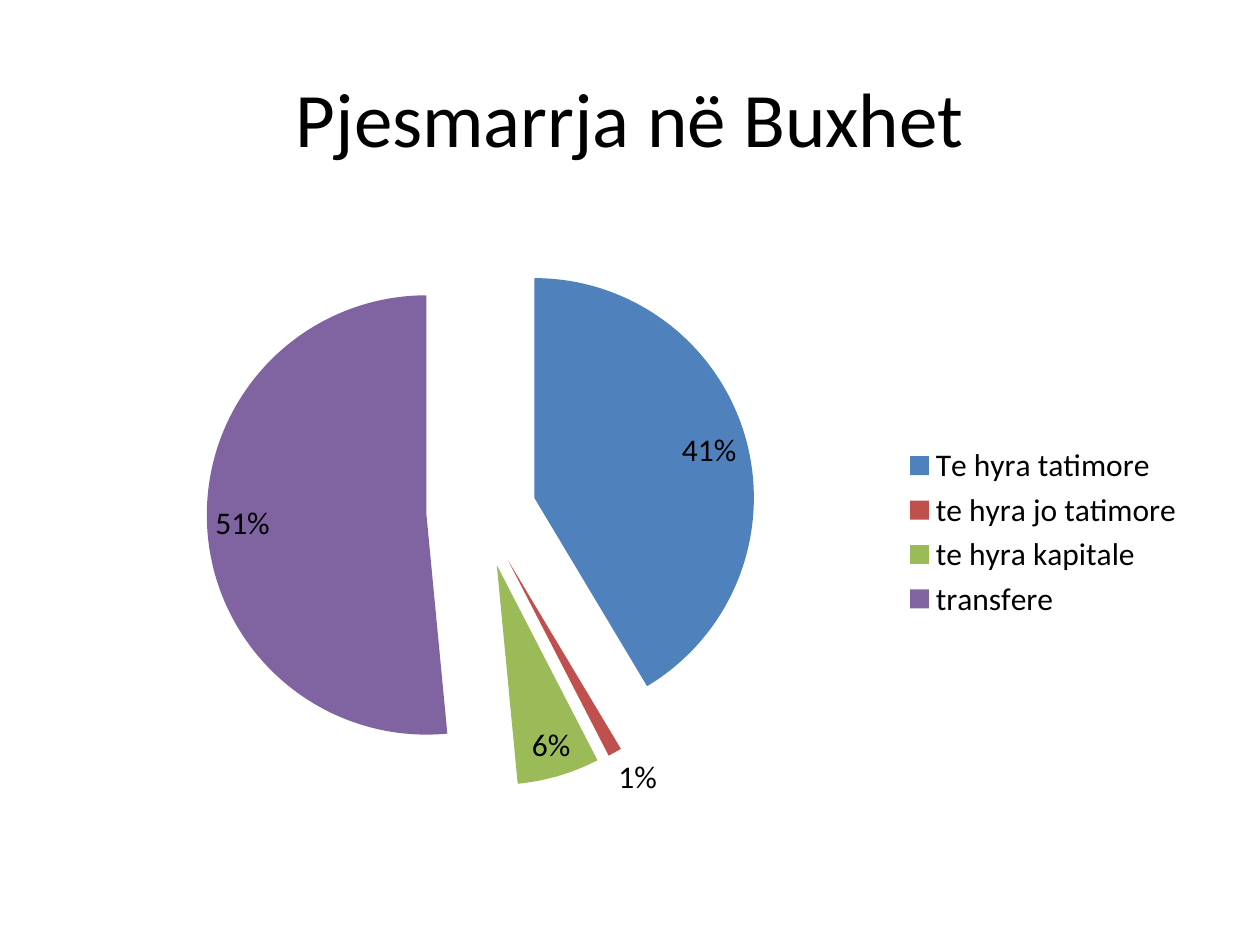
from lxml import etree
from pptx import Presentation
from pptx.chart.data import CategoryChartData
from pptx.dml.color import RGBColor
from pptx.enum.chart import XL_CHART_TYPE, XL_LABEL_POSITION, XL_LEGEND_POSITION
from pptx.enum.text import MSO_ANCHOR, PP_ALIGN
from pptx.oxml.ns import qn
from pptx.util import Inches, Pt

PIE = XL_CHART_TYPE.PIE
FIT = XL_LABEL_POSITION.BEST_FIT
RIGHT = XL_LEGEND_POSITION.RIGHT
MIDDLE = MSO_ANCHOR.MIDDLE
CENTER = PP_ALIGN.CENTER

SHARES = [
    ("Te hyra tatimore", 41, "4F81BD"),
    ("te hyra jo tatimore", 1, "C0504D"),
    ("te hyra kapitale", 6, "9BBB59"),
    ("transfere", 51, "8064A2"),
]


def style(font, size, color="000000"):
    for name, value in {"name": "Calibri", "size": Pt(size)}.items():
        setattr(font, name, value)
    font.color.rgb = RGBColor.from_string(color)


deck = Presentation()
deck.slide_width, deck.slide_height = Inches(10), Inches(7.5)
slide = deck.slides.add_slide(deck.slide_layouts[5])

# Title
title = slide.shapes.title
place = {"left": 0.5, "top": 0.3, "width": 9, "height": 1.25}
for name, value in place.items():
    setattr(title, name, Inches(value))
frame = title.text_frame
frame.text = "Pjesmarrja në Buxhet"
frame.vertical_anchor = MIDDLE
head = frame.paragraphs[0]
head.alignment = CENTER
style(head.runs[0].font, 44)

# Pie chart
data = CategoryChartData()
data.categories = [label for label, share, color in SHARES]
data.add_series("Series 1", [share for label, share, color in SHARES])
chart = slide.shapes.add_chart(
    PIE, Inches(0.5), Inches(1.75), Inches(9), Inches(4.95), data
).chart
style(chart.font, 18)
chart.has_title = False
chart.has_legend = True
chart.legend.position = RIGHT
chart.legend.include_in_layout = False

# Slice colours
plot = chart.plots[0]
plot.vary_by_categories = True
pie = plot.series[0]
for i, (label, share, color) in enumerate(SHARES):
    fill = pie.points[i].format.fill
    fill.solid()
    fill.fore_color.rgb = RGBColor.from_string(color)

# Pull the slices apart
burst = etree.Element(qn("c:explosion"), val="25")
pie._element.find(qn("c:dPt")).addprevious(burst)

# Labels: the shares are whole percents already
plot.has_data_labels = True
labels = plot.data_labels
options = {
    "show_value": True,
    "number_format": '0"%"',
    "number_format_is_linked": False,
    "position": FIT,
}
for name, value in options.items():
    setattr(labels, name, value)
style(labels.font, 18)

deck.save("out.pptx")
